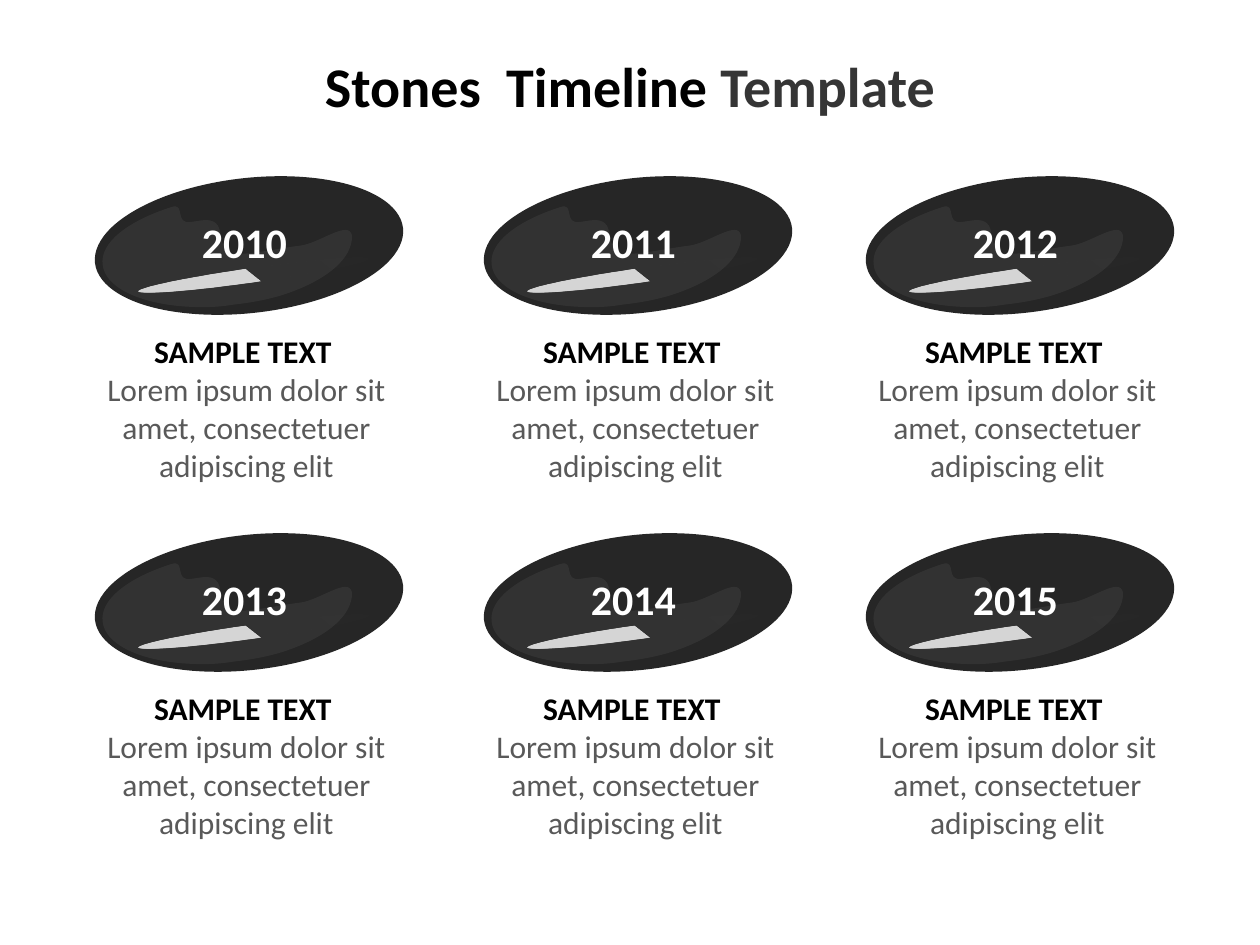
from lxml import etree
from pptx import Presentation
from pptx import util as u
from pptx.dml.color import RGBColor
from pptx.enum import shapes, text
from pptx.oxml.ns import qn

FONT = "Calibri"
BLACK = RGBColor(0x00, 0x00, 0x00)
CHARCOAL = RGBColor(0x35, 0x35, 0x35)
STONE = RGBColor(0x26, 0x26, 0x26)
SHEEN = RGBColor(0xD9, 0xD9, 0xD9)
GLOSS = RGBColor(0xD7, 0xD7, 0xD7)
GLOSS_END = RGBColor(0x97, 0x97, 0x97)
GREY = RGBColor(0x59, 0x59, 0x59)
WHITE = RGBColor(0xFF, 0xFF, 0xFF)

COLUMNS = (94, 483, 865)
FIRST_ROW, ROW_STEP = 178, 357
FIRST_YEAR = 2010
STONE_TILT, GLOSS_TILT = -6.5, -7.7

# Sheen outline, before tilting: each row is two control points and an end point
SHEEN_WIDTH, SHEEN_HEIGHT = 251, 108
SHEEN_START = (0, 54)
SHEEN_CURVES = (
    ((-1, 32), (29, 13), (75, 4)),
    ((90, 1), (75, 22), (93, 21)),
    ((102, 21), (111, 19), (117, 25)),
    ((124, 31), (116, 52), (130, 57)),
    ((143, 61), (178, 57), (198, 57)),
    ((218, 57), (250, 36), (251, 53)),
    ((249, 76), (220, 95), (175, 104)),
    ((159, 107), (143, 108), (125, 108)),
    ((107, 109), (91, 107), (75, 104)),
    ((29, 95), (0, 75), SHEEN_START),
)


def px(length):
    return u.Emu(round(length * 914400 / 126))


def set_alpha(color_element, percent):
    etree.SubElement(color_element, qn("a:alpha"), val=str(percent * 1000))


def finish(shape, tilt):
    """Tilt a shape and take off its outline and shadow."""
    shape.rotation = tilt
    shape.line.fill.background()
    shape.shadow.inherit = False


def add_ellipse(group, left, top, width, height, tilt):
    ellipse = group.shapes.add_shape(
        shapes.MSO_SHAPE.OVAL, px(left), px(top), px(width), px(height))
    finish(ellipse, tilt)
    return ellipse


def add_points(parent, tag, points):
    segment = etree.SubElement(parent, qn(tag))
    for x, y in points:
        etree.SubElement(segment, qn("a:pt"), x=str(px(x)), y=str(px(y)))


def bend_outline(shape):
    """Swap the straight segments of the sheen for its Bezier curves."""
    outline = shape._element.spPr.find(".//" + qn("a:path"))
    for segment in list(outline):
        outline.remove(segment)
    outline.set("w", str(px(SHEEN_WIDTH)))
    outline.set("h", str(px(SHEEN_HEIGHT)))
    add_points(outline, "a:moveTo", [SHEEN_START])
    for curve in SHEEN_CURVES:
        add_points(outline, "a:cubicBezTo", curve)
    etree.SubElement(outline, qn("a:close"))


def add_sheen(group, left, top):
    frame = [(SHEEN_WIDTH, 0), (SHEEN_WIDTH, SHEEN_HEIGHT), (0, SHEEN_HEIGHT)]
    builder = group.shapes.build_freeform(0, 0)
    builder.add_line_segments([tuple(map(px, corner)) for corner in frame])
    sheen = builder.convert_to_shape(px(left), px(top))
    bend_outline(sheen)
    finish(sheen, STONE_TILT)
    sheen.fill.solid()
    sheen.fill.fore_color.rgb = SHEEN
    set_alpha(sheen._element.spPr.find(f"{qn('a:solidFill')}/{qn('a:srgbClr')}"), 7)


def add_gloss(group, left, top):
    """Thin ellipse whose gradient cuts to clear halfway."""
    gloss = add_ellipse(group, left, top, 231, 14, GLOSS_TILT)
    gloss.fill.gradient()
    gloss.fill.gradient_angle = 45
    stops = gloss._element.spPr.find(f"{qn('a:gradFill')}/{qn('a:gsLst')}")
    for stop in list(stops):
        stops.remove(stop)
    for position, color, alpha in (
            (0, GLOSS, 100), (50, GLOSS, 100), (50, GLOSS, 0), (100, GLOSS_END, 1)):
        stop = etree.SubElement(stops, qn("a:gs"), pos=str(position * 1000))
        set_alpha(etree.SubElement(stop, qn("a:srgbClr"), val=str(color)), alpha)


def add_stone(page, left, top):
    group = page.shapes.add_group_shape()
    body = add_ellipse(group, left, top, 310, 135, STONE_TILT)
    body.fill.solid()
    body.fill.fore_color.rgb = STONE
    add_sheen(group, left + 8, top + 19)
    add_gloss(group, left + 44, top + 90)


def add_span(para, content, *, size, color, bold=False):
    span = para.add_run()
    span.text = content
    span.font.name = FONT
    span.font.size = u.Pt(size)
    span.font.bold = bold
    span.font.color.rgb = color


def write(frame, paragraphs, wrap=True):
    """Fill a frame with centred paragraphs, each a list of (text, format)."""
    frame.word_wrap = wrap
    frame.auto_size = text.MSO_AUTO_SIZE.SHAPE_TO_FIT_TEXT
    frame.vertical_anchor = text.MSO_ANCHOR.TOP
    for index, spans in enumerate(paragraphs):
        para = frame.add_paragraph() if index else frame.paragraphs[0]
        para.alignment = text.PP_ALIGN.CENTER
        for content, style in spans:
            add_span(para, content, **style)


def add_text(page, left, top, width, height, paragraphs, wrap=True):
    box = page.shapes.add_textbox(px(left), px(top), px(width), px(height))
    write(box.text_frame, paragraphs, wrap)


def add_title(page):
    title = page.shapes.title
    title.left, title.top, title.width, title.height = map(px, (126, 45, 1008, 81))
    write(title.text_frame, [[
        ("Stones  Timeline ", dict(size=32, color=BLACK, bold=True)),
        ("Template", dict(size=32, color=CHARCOAL, bold=True)),
    ]])


def add_milestone(page, left, top, year):
    add_stone(page, left, top)
    add_text(page, left + 95, top + 32, 111, 63,
             [[(str(year), dict(size=24, color=WHITE, bold=True))]], wrap=False)
    add_text(page, left, top + 148, 305, 165, [
        [("SAMPLE TEXT ", dict(size=18, color=BLACK, bold=True))],
        [("Lorem ipsum dolor sit amet, consectetuer adipiscing elit",
          dict(size=18, color=GREY))],
    ])


def main():
    deck = Presentation()
    deck.slide_width, deck.slide_height = px(1260), px(945)
    page = deck.slides.add_slide(deck.slide_layouts[5])
    add_title(page)
    for index in range(6):
        row, column = divmod(index, len(COLUMNS))
        add_milestone(page, COLUMNS[column], FIRST_ROW + row * ROW_STEP,
                      FIRST_YEAR + index)
    deck.save("out.pptx")


if __name__ == "__main__":
    main()
